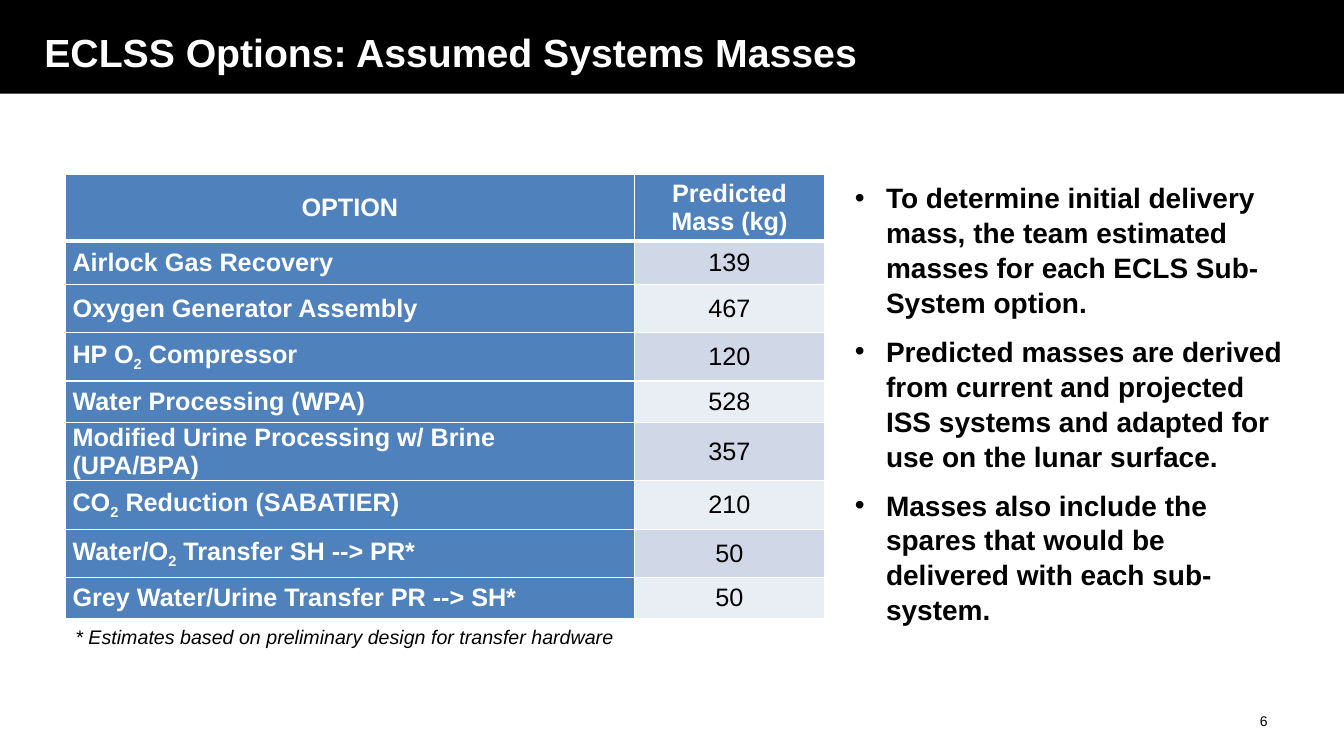
from dataclasses import dataclass

from lxml.etree import SubElement
from pptx import Presentation
from pptx.dml.color import RGBColor
from pptx.enum.shapes import MSO_SHAPE as Shape
from pptx.enum.text import MSO_ANCHOR as Anchor, PP_ALIGN as Align
from pptx.oxml import parse_xml
from pptx.oxml.ns import nsdecls, qn
from pptx.util import Pt

EMU_PER_PX = 9144  # 100 px to the inch


@dataclass(frozen=True)
class Theme:
    font: str = "Arial"
    black: str = "000000"
    white: str = "FFFFFF"
    blue: str = "4F81BD"
    bands: tuple = ("D0D8E8", "E9EDF4")
    title_size: int = 28
    bullet_size: int = 20
    table_size: int = 18
    note_size: int = 14
    number_size: int = 10


THEME = Theme()

TITLE = "ECLSS Options: Assumed Systems Masses"
HEADER = ("OPTION", "Predicted Mass (kg)")
# Text between tildes is set as a subscript
MASSES = (
    ("Airlock Gas Recovery", 139),
    ("Oxygen Generator Assembly", 467),
    ("HP O~2~ Compressor", 120),
    ("Water Processing (WPA)", 528),
    ("Modified Urine Processing w/ Brine (UPA/BPA)", 357),
    ("CO~2~ Reduction (SABATIER)", 210),
    ("Water/O~2~ Transfer SH --> PR*", 50),
    ("Grey Water/Urine Transfer PR --> SH*", 50),
)
COLUMN_WIDTHS = (564, 189)
ROW_HEIGHTS = (66, 43, 48, 48, 41, 58, 48, 48, 41)
NOTE = "* Estimates based on preliminary design for transfer hardware"
BULLETS = (
    "To determine initial delivery mass, the team estimated masses for each ECLS Sub-System option.",
    "Predicted masses are derived from current and projected ISS systems and adapted for use on the lunar surface.",
    "Masses also include the spares that would be delivered with each sub-system.",
)


def px(length):
    return length * EMU_PER_PX


def set_all(target, values):
    for name, value in values.items():
        setattr(target, name, value)


def write(para, text, size, color, align=Align.LEFT, **style):
    para.alignment = align
    for index, part in enumerate(text.split("~")):
        span = para.add_run()
        span.text = part
        set_all(span.font, {"name": THEME.font, "size": Pt(size), **style})
        span.font.color.rgb = RGBColor.from_string(color)
        if index % 2:
            span.font._element.set("baseline", "-25000")


def add_text(slide, area, anchor=Anchor.MIDDLE):
    frame = slide.shapes.add_textbox(*map(px, area)).text_frame
    set_all(frame, {"word_wrap": True, "vertical_anchor": anchor})
    return frame


def add_title(slide, text):
    # Black band behind the title
    band = slide.shapes.add_shape(Shape.RECTANGLE, 0, 0, px(1333), px(93))
    band.shadow.inherit = False
    band.fill.solid()
    band.fill.fore_color.rgb = RGBColor.from_string(THEME.black)
    band.line.fill.background()
    slide.shapes._spTree.insert(2, band._element)

    title = slide.shapes.title
    set_all(title, {"left": px(34), "top": px(11), "width": px(1178), "height": px(81)})
    set_all(title.text_frame, {"word_wrap": True, "vertical_anchor": Anchor.MIDDLE})
    write(title.text_frame.paragraphs[0], text, THEME.title_size, THEME.white, bold=True)


def set_borders(cell, **widths):
    properties = cell._tc.get_or_add_tcPr()
    for index, side in enumerate("LRTB"):
        properties.insert(index, parse_xml(
            f'<a:ln{side} {nsdecls("a")} w="{Pt(widths.get(side, 1))}"><a:solidFill>'
            f'<a:srgbClr val="{THEME.white}"/></a:solidFill></a:ln{side}>'))


def fill_cell(cell, text, fill, color, align, bold, **borders):
    set_all(cell, {"margin_left": px(7), "margin_right": px(7), "margin_top": 0,
                   "margin_bottom": 0, "vertical_anchor": Anchor.MIDDLE})
    cell.fill.solid()
    cell.fill.fore_color.rgb = RGBColor.from_string(fill)
    set_borders(cell, **borders)
    write(cell.text_frame.paragraphs[0], text, THEME.table_size, color, align, bold=bold)


def add_mass_table(slide, left, top):
    area = (left, top, sum(COLUMN_WIDTHS), sum(ROW_HEIGHTS))
    table = slide.shapes.add_table(len(ROW_HEIGHTS), len(COLUMN_WIDTHS), *map(px, area)).table
    for column, width in zip(table.columns, COLUMN_WIDTHS):
        column.width = px(width)
    for row, height in zip(table.rows, ROW_HEIGHTS):
        row.height = px(height)

    for column, label in enumerate(HEADER):
        fill_cell(table.cell(0, column), label, THEME.blue, THEME.white, Align.CENTER, True, B=3)
    for row, (option, mass) in enumerate(MASSES, start=1):
        top_line = 3 if row == 1 else 1
        fill_cell(table.cell(row, 0), option, THEME.blue, THEME.white, Align.LEFT, True, T=top_line)
        fill_cell(table.cell(row, 1), str(mass), THEME.bands[(row - 1) % 2], THEME.black,
                  Align.CENTER, False, T=top_line)


def add_bullets(slide, area, items):
    frame = add_text(slide, area, Anchor.TOP)
    for index, item in enumerate(items):
        para = frame.add_paragraph() if index else frame.paragraphs[0]
        set_all(para, {"space_after": Pt(10), "line_spacing": 1.04})
        properties = para._p.get_or_add_pPr()
        properties.set("marL", str(px(31)))
        properties.set("indent", str(px(-31)))
        SubElement(properties, qn("a:buFont"), typeface=THEME.font)
        SubElement(properties, qn("a:buChar"), char="•")
        write(para, item, THEME.bullet_size, THEME.black, bold=True)


def main():
    deck = Presentation()
    set_all(deck, {"slide_width": px(1333), "slide_height": px(750)})
    page = deck.slides.add_slide(deck.slide_layouts[5])

    add_title(page, TITLE)
    add_mass_table(page, 65, 173)
    add_bullets(page, (838, 173, 447, 442), BULLETS)

    # Footnote and page number
    note = add_text(page, (65, 615, 586, 34))
    write(note.paragraphs[0], NOTE, THEME.note_size, THEME.black, italic=True)
    number = add_text(page, (956, 695, 311, 40))
    write(number.paragraphs[0], "6", THEME.number_size, THEME.black, Align.RIGHT)

    deck.save("out.pptx")


if __name__ == "__main__":
    main()
